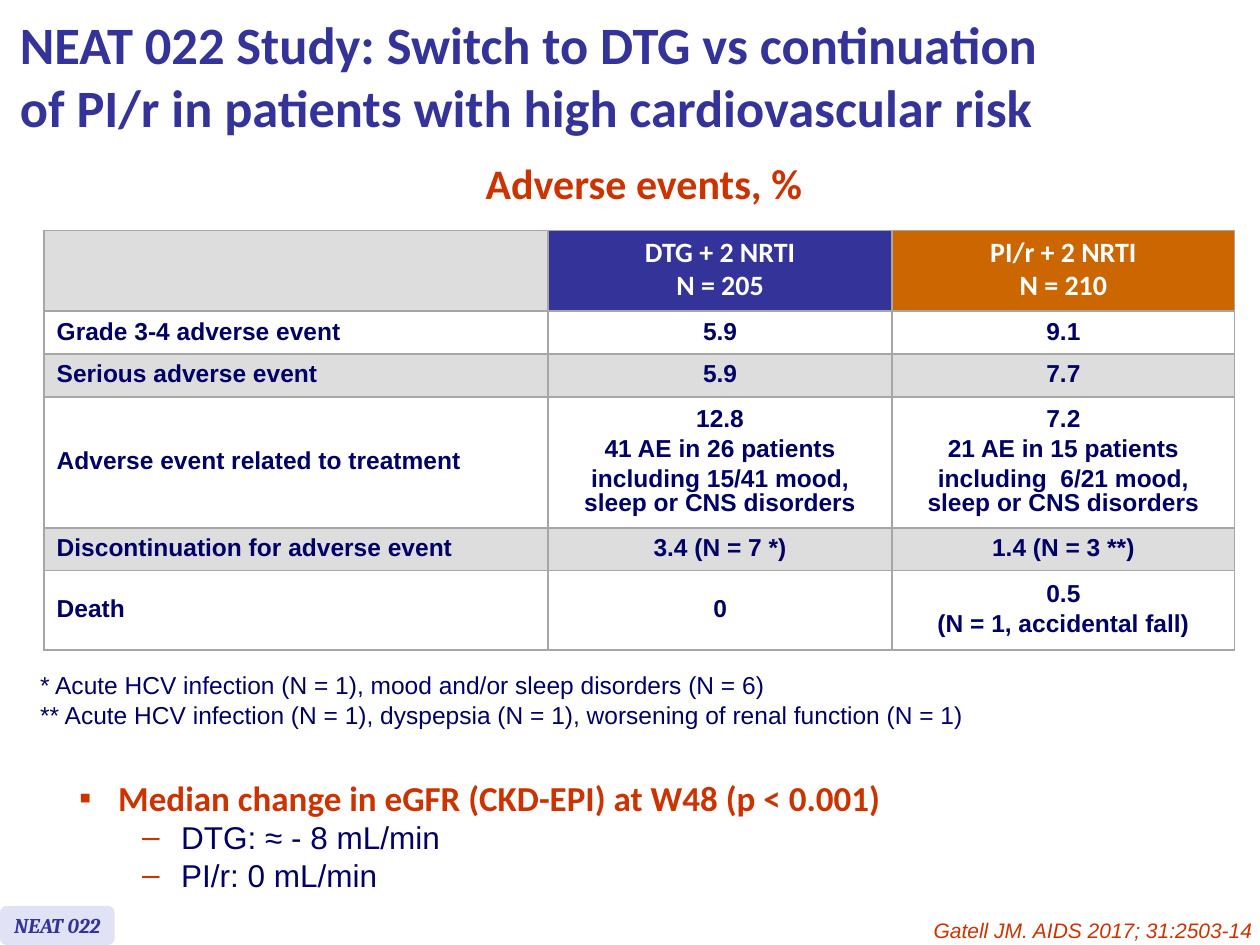
from dataclasses import dataclass

from lxml.etree import SubElement
from pptx import Presentation
from pptx.dml.color import RGBColor
from pptx.enum.shapes import MSO_SHAPE as Shape
from pptx.enum.text import MSO_ANCHOR as Anchor, PP_ALIGN as Align
from pptx.oxml.ns import qn
from pptx.util import Emu, Inches, Pt

# The slide is a grid of 100 columns by 75 rows of square units
COLUMNS, ROWS = 100, 75
UNIT = Inches(0.1)

BLUE, NAVY, RED, ORANGE = "333399", "000066", "CC3300", "CC6600"
WHITE, GREY, BORDER, LAVENDER = "FFFFFF", "DDDDDD", "A6A6A6", "E2E2F6"


@dataclass(frozen=True)
class Box:
    left: float
    top: float
    width: float
    height: float

    def lengths(self) -> list[Emu]:
        return [units(n) for n in (self.left, self.top, self.width, self.height)]


@dataclass(frozen=True)
class Style:
    size: float
    font: str
    color: str
    bold: bool = False
    italic: bool = False
    align: Align = Align.LEFT
    spacing: object = None
    before: float = 0


@dataclass(frozen=True)
class Bullet:
    symbol: str
    level: int
    margin: float


@dataclass(frozen=True)
class Line:
    text: str
    style: Style
    bullet: Bullet | None = None


TITLE = Style(30, "Calibri", BLUE, bold=True)
SUBTITLE = Style(24, "Calibri", RED, bold=True, align=Align.CENTER, spacing=Pt(15.2))
HEADER = Style(16, "Calibri", WHITE, True, align=Align.CENTER, spacing=0.8, before=3.2)
LABEL = Style(14, "Arial", NAVY, True, spacing=0.9, before=2.8)
VALUE = Style(14, "Arial", NAVY, True, align=Align.CENTER, spacing=0.9, before=2.8)
NOTE = Style(14, "Arial", NAVY)
FINDING = Style(20, "Calibri", RED, bold=True)
DETAIL = Style(18, "Arial", NAVY)
BADGE = Style(12, "Cambria", BLUE, True, True, Align.CENTER)
CITATION = Style(12, "Arial", RED, italic=True, align=Align.RIGHT)

SQUARE = Bullet("▪", 0, 3.1)
DASH = Bullet("‒", 1, 8.1)
HANGING = 3.1

TABLE_BOX = Box(3.5, 18.3, 94.5, 33.3)
TABLE_COLUMNS = (40, 27.3, 27.2)
TABLE_ROWS = (6.4, 3.4, 3.4, 10.4, 3.4, 6.3)
HEADER_FILLS = (GREY, BLUE, ORANGE)
TABLE = [
    ("", "DTG + 2 NRTI\nN = 205", "PI/r + 2 NRTI\nN = 210"),
    ("Grade 3-4 adverse event", "5.9", "9.1"),
    ("Serious adverse event", "5.9", "7.7"),
    ("Adverse event related to treatment",
     "12.8\n41 AE in 26 patients\nincluding 15/41 mood, sleep or CNS disorders",
     "7.2\n21 AE in 15 patients\nincluding  6/21 mood, sleep or CNS disorders"),
    ("Discontinuation for adverse event", "3.4 (N = 7 *)", "1.4 (N = 3 **)"),
    ("Death", "0", "0.5\n(N = 1, accidental fall)"),
]


def units(count: float) -> Emu:
    return Emu(round(count * UNIT))


def rgb(color: str) -> RGBColor:
    return RGBColor.from_string(color)


def paint(target, color: str) -> None:
    target.fill.solid()
    target.fill.fore_color.rgb = rgb(color)


def add_bullet(paragraph, bullet: Bullet) -> None:
    paragraph.level = bullet.level
    properties = paragraph._p.get_or_add_pPr()
    properties.set("marL", str(units(bullet.margin)))
    properties.set("indent", str(-units(HANGING)))
    color = SubElement(properties, qn("a:buClr"))
    SubElement(color, qn("a:srgbClr"), val=RED)
    SubElement(properties, qn("a:buFont"), typeface="Arial")
    SubElement(properties, qn("a:buChar"), char=bullet.symbol)


def write(frame, lines: list[Line]) -> None:
    for index, line in enumerate(lines):
        paragraph = frame.add_paragraph() if index else frame.paragraphs[0]
        paragraph.text = line.text
        style = line.style
        paragraph.alignment = style.align
        if style.spacing:
            paragraph.line_spacing = style.spacing
        if index and style.before:
            paragraph.space_before = Pt(style.before)
        if line.bullet:
            add_bullet(paragraph, line.bullet)
        font = paragraph.font
        font.size, font.name = Pt(style.size), style.font
        font.bold, font.italic = style.bold, style.italic
        font.color.rgb = rgb(style.color)


def add_text(slide, box: Box, lines: list[Line], wrap: bool = True) -> None:
    frame = slide.shapes.add_textbox(*box.lengths()).text_frame
    frame.word_wrap = wrap
    write(frame, lines)


def add_borders(cell) -> None:
    properties = cell._tc.get_or_add_tcPr()
    for index, side in enumerate(("a:lnL", "a:lnR", "a:lnT", "a:lnB")):
        border = properties.makeelement(qn(side), {"w": str(Pt(1))})
        fill = SubElement(border, qn("a:solidFill"))
        SubElement(fill, qn("a:srgbClr"), val=BORDER)
        properties.insert(index, border)


def add_events_table(slide) -> None:
    frame = slide.shapes.add_table(len(TABLE_ROWS), len(TABLE_COLUMNS), *TABLE_BOX.lengths())
    table = frame.table
    table.first_row = table.horz_banding = False
    for column, width in zip(table.columns, TABLE_COLUMNS):
        column.width = units(width)
    for row, height in zip(table.rows, TABLE_ROWS):
        row.height = units(height)
    for r, texts in enumerate(TABLE):
        for c, text in enumerate(texts):
            cell = table.cell(r, c)
            cell.vertical_anchor = Anchor.MIDDLE
            style = HEADER if r == 0 else VALUE if c else LABEL
            write(cell.text_frame, [Line(part, style) for part in text.split("\n")])
            paint(cell, HEADER_FILLS[c] if r == 0 else WHITE if r % 2 else GREY)
            add_borders(cell)


def add_badge(slide, box: Box, text: str) -> None:
    shape = slide.shapes.add_shape(Shape.ROUNDED_RECTANGLE, *box.lengths())
    shape.shadow.inherit = False
    paint(shape, LAVENDER)
    shape.line.fill.background()
    frame = shape.text_frame
    frame.word_wrap = False
    frame.vertical_anchor = Anchor.MIDDLE
    write(frame, [Line(text, BADGE)])


def main() -> None:
    presentation = Presentation()
    presentation.slide_width, presentation.slide_height = units(COLUMNS), units(ROWS)
    slide = presentation.slides.add_slide(presentation.slide_layouts[6])

    # Results table with its heading and footnotes
    add_events_table(slide)
    add_text(slide, Box(2.2, 13.9, 97.8, 3.5), [Line("Adverse events, %", SUBTITLE)])
    add_text(slide, Box(2.2, 52.7, 75.3, 5.7), [
        Line("* Acute HCV infection (N = 1), mood and/or sleep disorders (N = 6)", NOTE),
        Line("** Acute HCV infection (N = 1), dyspepsia (N = 1), "
             "worsening of renal function (N = 1)", NOTE),
    ], wrap=False)

    # Renal function finding
    add_text(slide, Box(5.3, 61.1, 66.8, 10.4), [
        Line("Median change in eGFR (CKD-EPI) at W48 (p < 0.001)", FINDING, SQUARE),
        Line("DTG: ≈ - 8 mL/min", DETAIL, DASH),
        Line("PI/r: 0 mL/min", DETAIL, DASH),
    ], wrap=False)

    # Study badge, title and citation
    add_badge(slide, Box(0, 71.9, 9.1, 3.1), "NEAT 022")
    add_text(slide, Box(0.6, 0.5, 98.7, 12.1), [
        Line("NEAT 022 Study: Switch to DTG vs continuation\n"
             "of PI/r in patients with high cardiovascular risk", TITLE)])
    add_text(slide, Box(65.4, 72.3, 35, 3), [Line("Gatell JM. AIDS 2017; 31:2503-14", CITATION)])

    presentation.save("out.pptx")


if __name__ == "__main__":
    main()
